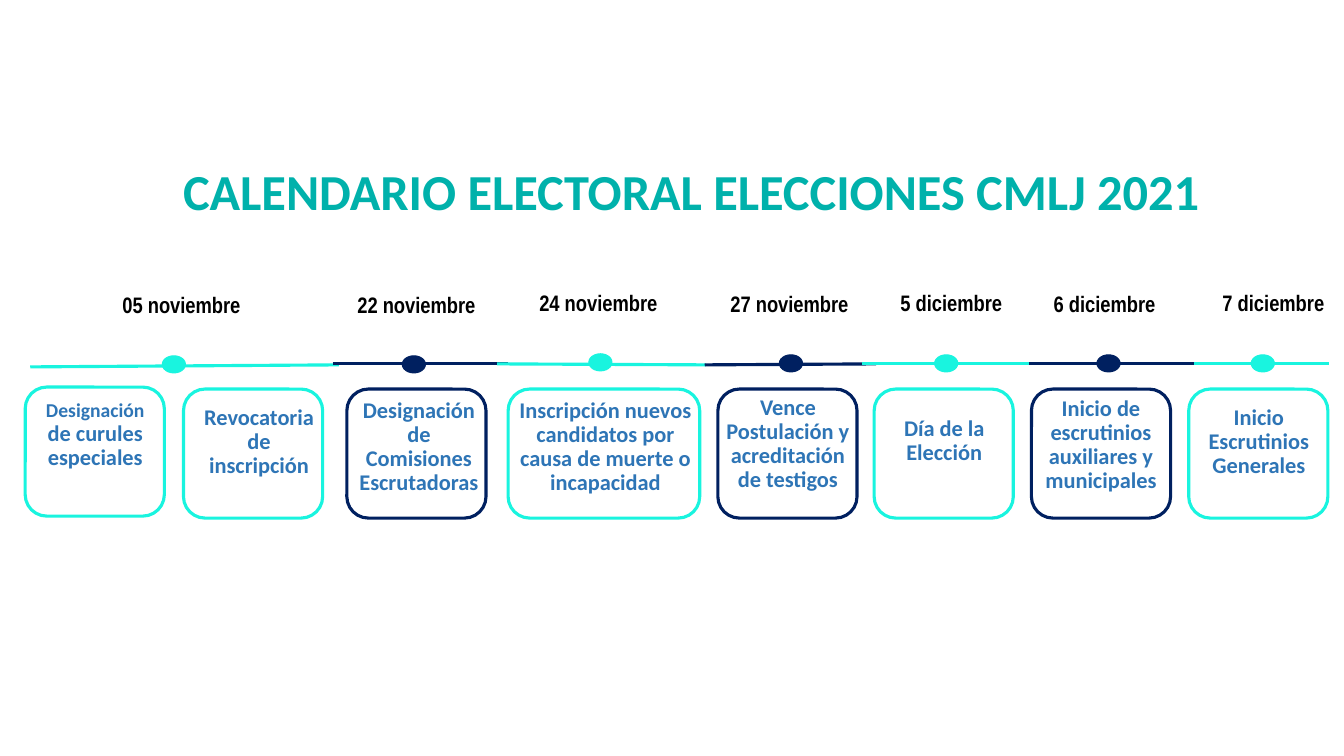
from dataclasses import dataclass

from lxml.etree import SubElement
from pptx import Presentation
from pptx.dml.color import RGBColor
from pptx.enum.shapes import MSO_CONNECTOR as Connector, MSO_SHAPE as Shape
from pptx.enum.text import MSO_ANCHOR as Anchor, PP_ALIGN as Align
from pptx.oxml.ns import qn
from pptx.util import Inches, Pt


@dataclass(frozen=True)
class Theme:
    heading: str = "00B1AB"
    date: str = "000000"
    body: str = "2E75B6"
    aqua: str = "19F4DF"
    navy: str = "002060"
    body_font: str = "Calibri"
    date_font: str = "Arial Narrow"
    title_size: float = 36
    text_size: float = 16
    small_size: float = 14
    thick: float = 2.25
    thin: float = 0.75


THEME = Theme()

# date, date box, axis start, axis end, dot position, colour
MILESTONES = [
    ("05 noviembre", (1.08, 2.92, 1.44, 0.49), (0.3, 3.64), (3.36, 3.62), (1.61, 3.53), THEME.aqua),
    ("22 noviembre", (3.42, 2.92, 1.42, 0.61), (3.3, 3.61), (5.04, 3.61), (3.99, 3.53), THEME.navy),
    ("24 noviembre", (5.23, 2.9, 1.41, 0.57), (4.93, 3.61), (7, 3.62), (5.84, 3.51), THEME.aqua),
    ("27 noviembre", (7.14, 2.91, 1.38, 0.98), (6.99, 3.62), (8.69, 3.61), (7.73, 3.52), THEME.navy),
    ("5 diciembre", (8.86, 2.9, 1.15, 0.83), (8.55, 3.61), (10.21, 3.61), (9.27, 3.52), THEME.aqua),
    ("6 diciembre", (10.25, 2.91, 1.41, 0.83), (10.21, 3.61), (11.96, 3.61), (10.88, 3.52), THEME.navy),
    ("7 diciembre", (11.98, 2.9, 1.3, 0.79), (11.84, 3.61), (13.18, 3.61), (12.41, 3.52), THEME.aqua),
]

CARD_WIDTH, CARD_HEIGHT, CARD_TOP = 1.38, 1.28, 3.86
DOT_WIDTH, DOT_HEIGHT = 0.23, 0.17

CARDS = [
    ((0.25, 3.84, CARD_WIDTH), THEME.aqua, (0.3, 3.95, 1.19, 0.56),
     [("Designación", THEME.small_size), (" de curules especiales", THEME.text_size)]),
    ((1.82, CARD_TOP, CARD_WIDTH), THEME.aqua, (1.86, 4.03, 1.32, 0.56),
     "Revocatoria de inscripción"),
    ((3.44, CARD_TOP, CARD_WIDTH), THEME.navy, (3.46, 3.96, 1.29, 1.8),
     "Designación de Comisiones Escrutadoras"),
    ((5.04, CARD_TOP, 1.9), THEME.aqua, (5.04, 3.96, 1.83, 0.94),
     "Inscripción nuevos candidatos por causa de muerte o incapacidad"),
    ((7.12, CARD_TOP, CARD_WIDTH), THEME.navy, (7.06, 3.93, 1.41, 1.5),
     "Vence Postulación y acreditación de testigos"),
    ((8.67, CARD_TOP, CARD_WIDTH), THEME.aqua, (8.72, 4.14, 1.19, 0.56),
     "Día de la Elección"),
    ((10.23, CARD_TOP, CARD_WIDTH), THEME.navy, (10.23, 3.94, 1.28, 0.56),
     "Inicio de escrutinios auxiliares y municipales"),
    ((11.79, CARD_TOP, CARD_WIDTH), THEME.aqua, (11.84, 4.03, 1.19, 0.56),
     "Inicio Escrutinios Generales"),
]


def inches(values):
    return [Inches(value) for value in values]


def write(frame, text, *, font, color, size=THEME.text_size, indent=0, after=0):
    frame.word_wrap = True
    frame.vertical_anchor = Anchor.TOP
    paragraph = frame.paragraphs[0]
    paragraph.alignment = Align.CENTER
    paragraph.line_spacing = 0.9
    paragraph.space_before = Pt(0)
    paragraph.space_after = Pt(after)
    if indent:
        properties = paragraph._p.get_or_add_pPr()
        properties.set("marL", str(Inches(indent)))
        properties.set("indent", "0")
    for content, run_size in [(text, size)] if isinstance(text, str) else text:
        run = paragraph.add_run()
        run.text = content
        run.font.name = font
        run.font.size = Pt(run_size)
        run.font.bold = True
        run.font.color.rgb = RGBColor.from_string(color)


def add_title(slide, text):
    title = slide.shapes.title
    title.left, title.top, title.width, title.height = inches((1.36, 1.61, 11, 0.87))
    write(title.text_frame, text, font=THEME.body_font, color=THEME.heading, size=THEME.title_size)


def add_text(slide, box, text, **style):
    frame = slide.shapes.add_textbox(*inches(box)).text_frame
    frame.margin_left = frame.margin_top = frame.margin_right = frame.margin_bottom = 0
    write(frame, text, **style)


def add_axis(slide, start, end, color):
    line = slide.shapes.add_connector(Connector.STRAIGHT, *inches(start + end))
    line.line.color.rgb = RGBColor.from_string(color)
    line.line.width = Pt(THEME.thick)
    SubElement(line._element.spPr, qn("a:effectLst"))


def add_outline(slide, kind, box, color, width, filled=False):
    shape = slide.shapes.add_shape(kind, *inches(box))
    shape.shadow.inherit = False
    shape.line.color.rgb = RGBColor.from_string(color)
    shape.line.width = Pt(width)
    if filled:
        shape.fill.solid()
        shape.fill.fore_color.rgb = RGBColor.from_string(color)
    else:
        shape.fill.background()


def add_milestone(slide, date, date_box, start, end, dot, color):
    add_axis(slide, start, end, color)
    add_outline(slide, Shape.OVAL, dot + (DOT_WIDTH, DOT_HEIGHT), color, THEME.thin, filled=True)
    add_text(slide, date_box, date, font=THEME.date_font, color=THEME.date, after=16)


def add_card(slide, place, color, text_box, text):
    add_outline(slide, Shape.ROUNDED_RECTANGLE, place + (CARD_HEIGHT,), color, THEME.thick)
    add_text(slide, text_box, text, font=THEME.body_font, color=THEME.body, indent=0.1)


def main():
    presentation = Presentation()
    presentation.slide_width, presentation.slide_height = inches((13.33, 7.5))
    slide = presentation.slides.add_slide(presentation.slide_layouts[5])
    add_title(slide, "CALENDARIO ELECTORAL ELECCIONES CMLJ 2021")
    for milestone in MILESTONES:
        add_milestone(slide, *milestone)
    for card in CARDS:
        add_card(slide, *card)
    presentation.save("out.pptx")


if __name__ == "__main__":
    main()
